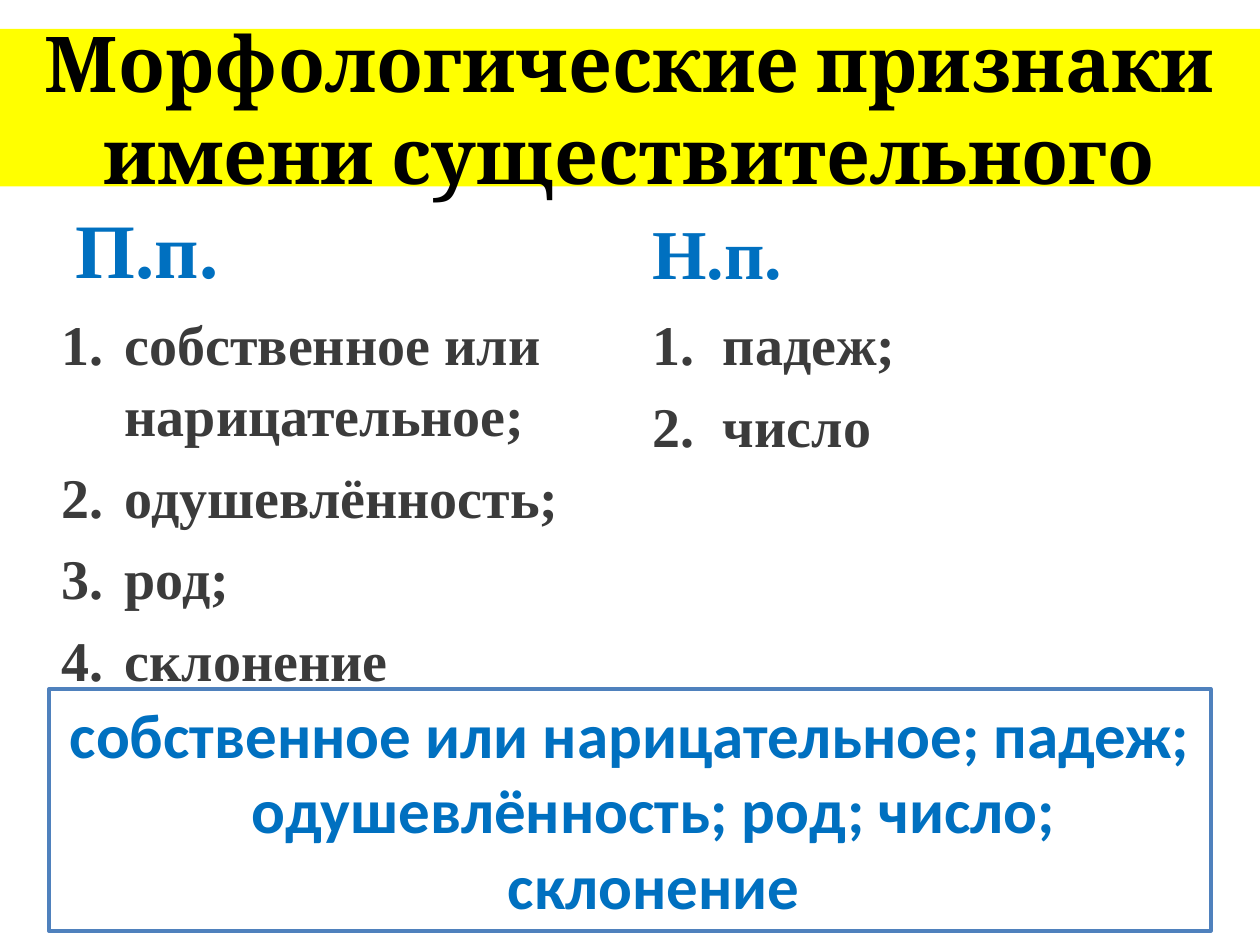
from dataclasses import dataclass

from lxml.etree import SubElement
from pptx import Presentation
from pptx.dml.color import RGBColor
from pptx.enum.shapes import MSO_SHAPE
from pptx.enum.text import MSO_ANCHOR, MSO_AUTO_SIZE, PP_ALIGN
from pptx.oxml.ns import qn
from pptx.util import Cm, Pt


@dataclass(frozen=True)
class Style:
    font: str
    size: int
    color: str


THEME = {
    "title": Style("Cambria", 44, "000000"),
    "list": Style("Times New Roman", 32, "3B3B3B"),
    "summary": Style("Calibri", 36, "0070C0"),
    "banner": "FFFF00",
    "paper": "FFFFFF",
    "border": "4F81BD",
}
TITLE = "Морфологические признаки имени существительного"
COLUMNS = [
    {
        "heading": "П.п.",
        "heading_style": Style("Times New Roman", 44, "0070C0"),
        "heading_left": 1.27,
        "items": ["собственное или нарицательное;", "одушевлённость;", "род;", "склонение"],
        "list_box": (0.99, 6.05, 11.51, 8.84),
        "indent": 1.27,
    },
    {
        "heading": "Н.п.",
        "heading_style": Style("Times New Roman", 40, "0070C0"),
        "heading_left": 12.9,
        "items": ["падеж;", "число"],
        "list_box": (12.9, 6.05, 11.23, 8.05),
        "indent": 1.42,
    },
]
SUMMARY = "собственное или нарицательное; падеж; одушевлённость; род; число; склонение"


def place(shape, left, top, width, height):
    shape.left, shape.top = Cm(left), Cm(top)
    shape.width, shape.height = Cm(width), Cm(height)


def paint(shape, color):
    shape.fill.solid()
    shape.fill.fore_color.rgb = RGBColor.from_string(color)


def write(paragraph, text, style):
    run = paragraph.add_run()
    run.text = text
    run.font.name = style.font
    run.font.size = Pt(style.size)
    run.font.bold = True
    run.font.color.rgb = RGBColor.from_string(style.color)


def hang(paragraph, indent):
    """Set a hanging indent and return the paragraph properties."""
    properties = paragraph._p.get_or_add_pPr()
    properties.set("marL", str(Cm(indent)))
    properties.set("indent", str(-Cm(indent)))
    return properties


def fill_numbered_list(shape, items, indent):
    style = THEME["list"]
    frame = shape.text_frame
    for index, item in enumerate(items):
        paragraph = frame.add_paragraph() if index else frame.paragraphs[0]
        paragraph.line_spacing = 1.05
        if index == 0:
            paragraph.space_before = Pt(0)
        properties = hang(paragraph, indent)
        SubElement(properties, qn("a:buFont"), typeface=style.font)
        SubElement(properties, qn("a:buAutoNum"), type="arabicPeriod")
        write(paragraph, item, style)


def add_summary(slide):
    box = slide.shapes.add_shape(MSO_SHAPE.RECTANGLE, Cm(0.99), Cm(13.89), Cm(23.42), Cm(4.88))
    box.shadow.inherit = False
    paint(box, THEME["paper"])
    box.line.color.rgb = RGBColor.from_string(THEME["border"])
    box.line.width = Pt(2)
    frame = box.text_frame
    frame.word_wrap = True
    frame.auto_size = MSO_AUTO_SIZE.SHAPE_TO_FIT_TEXT
    frame.vertical_anchor = MSO_ANCHOR.TOP
    paragraph = frame.paragraphs[0]
    paragraph.alignment = PP_ALIGN.CENTER
    hang(paragraph, 0.95)
    write(paragraph, SUMMARY, THEME["summary"])


def main():
    presentation = Presentation()
    presentation.slide_width, presentation.slide_height = Cm(25.4), Cm(19.05)
    comparison = presentation.slide_layouts.get_by_name("Comparison")
    slide = presentation.slides.add_slide(comparison)

    title, *bodies = slide.placeholders
    place(title, 0, 0.58, 25.4, 3.18)
    paint(title, THEME["banner"])
    title.text_frame.vertical_anchor = MSO_ANCHOR.MIDDLE
    write(title.text_frame.paragraphs[0], TITLE, THEME["title"])

    for column, heading, body in zip(COLUMNS, bodies[::2], bodies[1::2]):
        place(heading, column["heading_left"], 4.27, 11.23, 1.78)
        paragraph = heading.text_frame.paragraphs[0]
        paragraph.space_before = Pt(0)
        write(paragraph, column["heading"], column["heading_style"])
        place(body, *column["list_box"])
        fill_numbered_list(body, column["items"], column["indent"])

    add_summary(slide)
    presentation.save("out.pptx")


if __name__ == "__main__":
    main()
